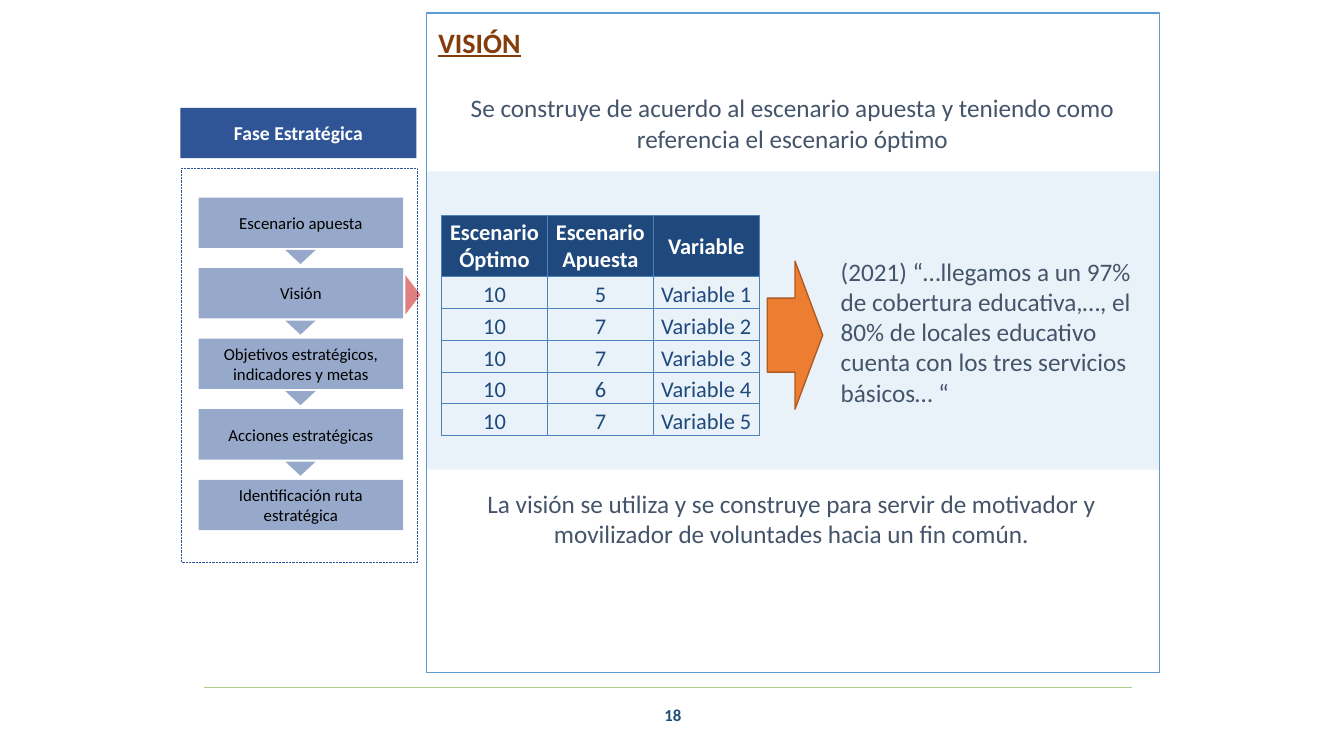
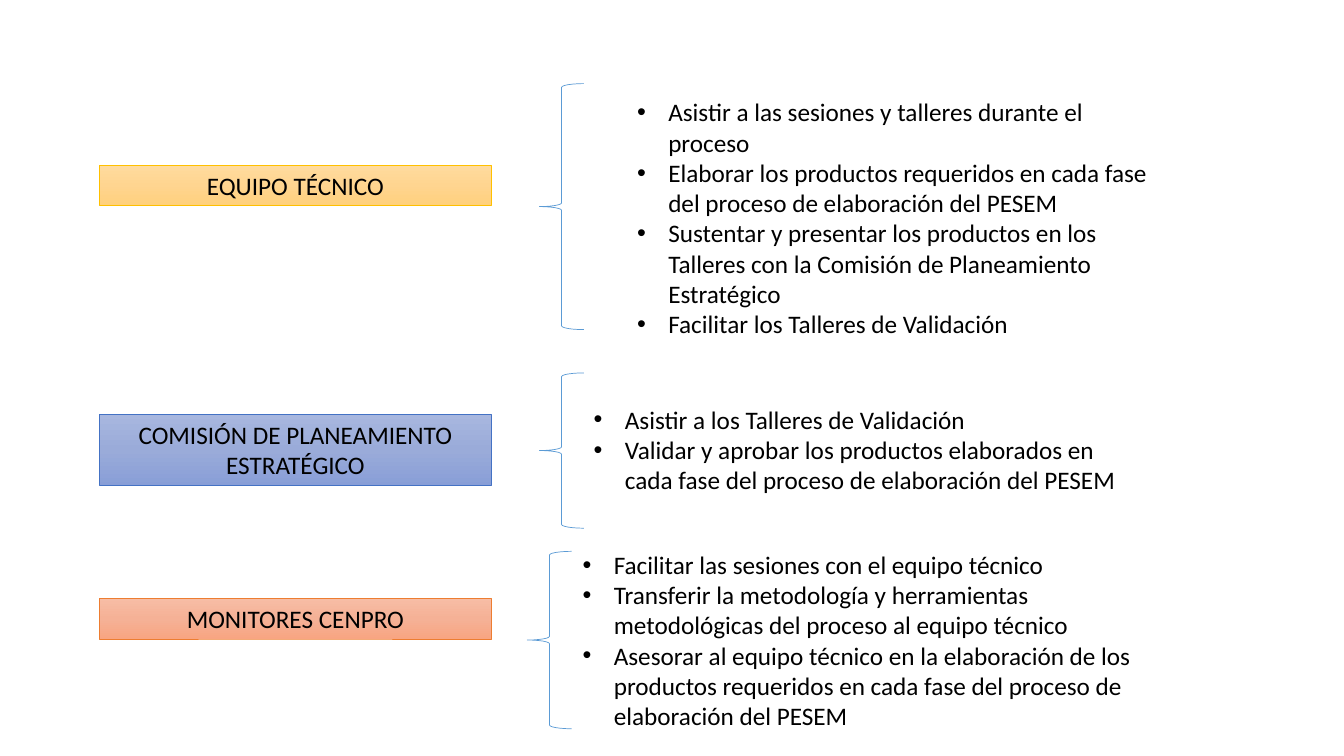
"""Build two slides on the strategic phase: the vision and the roles of each team."""
from copy import deepcopy
from dataclasses import dataclass
from typing import Optional, Sequence

from lxml.etree import SubElement
from pptx import Presentation
from pptx.dml.color import RGBColor
from pptx.enum.dml import MSO_LINE_DASH_STYLE as Dash
from pptx.enum.shapes import MSO_CONNECTOR_TYPE as Connector
from pptx.enum.shapes import MSO_SHAPE as Shape
from pptx.enum.text import MSO_VERTICAL_ANCHOR as Anchor
from pptx.enum.text import PP_PARAGRAPH_ALIGNMENT as Align
from pptx.oxml.ns import qn
from pptx.util import Inches, Pt


@dataclass(frozen=True)
class Theme:
    font: str = "Calibri"
    black: str = "000000"
    white: str = "FFFFFF"
    phase: str = "2F5597"
    marker: str = "C00000"
    accent: str = "5B9BD5"
    body: str = "44546A"
    title: str = "843C0B"
    rule: str = "A9D18E"
    page_number: str = "1F4E79"
    table: str = "1F497D"
    table_border: str = "4F81BD"
    arrow: str = "ED7D31"
    arrow_line: str = "AF5C24"
    title_size: int = 20
    body_size: int = 18
    table_size: int = 16
    phase_size: int = 14
    small_size: int = 12


@dataclass(frozen=True)
class Box:
    left: float
    top: float
    width: float
    height: float

    def lengths(self) -> tuple:
        return tuple(Inches(n) for n in (self.left, self.top, self.width, self.height))


@dataclass(frozen=True)
class Role:
    name: str
    label: Box
    gradient: tuple[str, str, str]
    line: str
    brace: Box
    list_box: Box
    duties: tuple[str, ...]


THEME = Theme()

STEPS = (
    "Escenario apuesta",
    "Visión",
    "Objetivos estratégicos, indicadores y metas",
    "Acciones estratégicas",
    "Identificación ruta estratégica",
)
STEP_PITCH = 0.7

TABLE_HEADER = ("Escenario Óptimo", "Escenario Apuesta", "Variable")
BET_SCORES = (5, 7, 7, 6, 7)
ROW_HEIGHTS = (0.6, 0.32, 0.32, 0.32, 0.3, 0.32)

ROLES = (
    Role(
        "EQUIPO TÉCNICO", Box(0.99, 1.64, 3.88, 0.4),
        ("FFDB9E", "FFD590", "FFD07C"), "FFC000",
        Box(5.35, 0.83, 0.44, 2.44), Box(6.22, 0.91, 5.44, 2.52),
        (
            "Asistir a las sesiones y talleres durante el proceso",
            "Elaborar los productos requeridos en cada fase del proceso de elaboración del PESEM",
            "Sustentar y presentar los productos en los Talleres con la Comisión de "
            "Planeamiento Estratégico",
            "Facilitar los Talleres de Validación",
        ),
    ),
    Role(
        "COMISIÓN DE PLANEAMIENTO ESTRATÉGICO", Box(0.99, 4.11, 3.88, 0.71),
        ("A8B7DF", "9AABD9", "889ED7"), "4472C4",
        Box(5.35, 3.7, 0.44, 1.54), Box(5.79, 3.96, 5.44, 1.01),
        (
            "Asistir a los Talleres de Validación",
            "Validar y aprobar los productos elaborados en cada fase del proceso de "
            "elaboración del PESEM",
        ),
    ),
    Role(
        "MONITORES CENPRO", Box(0.99, 5.94, 3.88, 0.4),
        ("F7BDA5", "F5B196", "F8A582"), "ED7D31",
        Box(5.23, 5.47, 0.44, 1.76), Box(5.68, 5.4, 6.06, 2.22),
        (
            "Facilitar las sesiones con el equipo técnico",
            "Transferir la metodología y herramientas metodológicas del proceso al "
            "equipo técnico",
            "Asesorar al equipo técnico en la elaboración de los productos requeridos en "
            "cada fase del proceso de elaboración del PESEM",
        ),
    ),
)


def rgb(color: str) -> RGBColor:
    return RGBColor.from_string(color)


def write_text(frame, *lines: str, size: int = THEME.body_size, color: str = THEME.black,
               bold: bool = False, underline: bool = False, align: Align = Align.LEFT,
               anchor: Anchor = Anchor.TOP, bullet: bool = False) -> None:
    frame.word_wrap = True
    frame.vertical_anchor = anchor
    for index, line in enumerate(lines):
        para = frame.add_paragraph() if index else frame.paragraphs[0]
        para.alignment = align
        span = para.add_run()
        span.text = line
        font = span.font
        font.name, font.size, font.bold = THEME.font, Pt(size), bold
        font.underline = underline
        font.color.rgb = rgb(color)
        if bullet:
            properties = para._p.get_or_add_pPr()
            properties.set("marL", str(Inches(0.31)))
            properties.set("indent", str(Inches(-0.31)))
            SubElement(properties, qn("a:buFont"), typeface="Arial")
            SubElement(properties, qn("a:buChar"), char="•")


def add_text(page, box: Box, *lines: str, **text_format) -> None:
    write_text(page.shapes.add_textbox(*box.lengths()).text_frame, *lines, **text_format)


def add_figure(page, kind: Shape, box: Box, fill: Optional[str] = None, opacity: int = 100,
               line: Optional[str] = None, width: float = 1, rotation: int = 0):
    figure = page.shapes.add_shape(kind, *box.lengths())
    figure.shadow.inherit = False
    figure.rotation = rotation
    if fill:
        figure.fill.solid()
        figure.fill.fore_color.rgb = rgb(fill)
        if opacity < 100:
            tint = figure.element.spPr.find(qn("a:solidFill")).find(qn("a:srgbClr"))
            SubElement(tint, qn("a:alpha"), val=str(opacity * 1000))
    else:
        figure.fill.background()
    if line:
        figure.line.color.rgb = rgb(line)
        figure.line.width = Pt(width)
    else:
        figure.line.fill.background()
    return figure


def fill_gradient(figure, colors: Sequence[str]) -> None:
    fill = figure.fill
    fill.gradient()
    fill.gradient_angle = 270
    stop_list = figure.element.spPr.find(qn("a:gradFill")).find(qn("a:gsLst"))
    while len(stop_list) < len(colors):
        stop_list.append(deepcopy(stop_list[0]))
    for index, (stop, color) in enumerate(zip(fill.gradient_stops, colors)):
        stop.position = index / (len(colors) - 1)
        stop.color.rgb = rgb(color)


def add_rule(page, left: float, right: float, top: float) -> None:
    rule = page.shapes.add_connector(
        Connector.STRAIGHT, Inches(left), Inches(top), Inches(right), Inches(top))
    rule.line.color.rgb = rgb(THEME.rule)
    rule.line.width = Pt(1.25)
    SubElement(rule.element.spPr, qn("a:effectLst"))


def set_borders(cell, color: str, width: float) -> None:
    properties = cell._tc.get_or_add_tcPr()
    for side in ("lnL", "lnR", "lnT", "lnB"):
        border = SubElement(properties, qn(f"a:{side}"), w=str(Pt(width)))
        SubElement(SubElement(border, qn("a:solidFill")), qn("a:srgbClr"), val=color)


def add_scenarios(page, box: Box) -> None:
    rows = [TABLE_HEADER]
    rows += [("10", str(score), f"Variable {number}")
             for number, score in enumerate(BET_SCORES, 1)]
    table = page.shapes.add_table(len(rows), len(TABLE_HEADER), *box.lengths()).table
    table.first_row = table.horz_banding = False
    for column in table.columns:
        column.width = Inches(box.width / len(TABLE_HEADER))
    for row_index, (row, height) in enumerate(zip(rows, ROW_HEIGHTS)):
        table.rows[row_index].height = Inches(height)
        is_header = row_index == 0
        for column_index, value in enumerate(row):
            cell = table.cell(row_index, column_index)
            cell.margin_left = cell.margin_right = cell.margin_top = Inches(0.01)
            cell.margin_bottom = 0
            cell.vertical_anchor = Anchor.MIDDLE if is_header else Anchor.BOTTOM
            set_borders(cell, THEME.table_border, 1)
            if is_header:
                cell.fill.solid()
                cell.fill.fore_color.rgb = rgb(THEME.table)
            else:
                cell.fill.background()
            write_text(cell.text_frame, value, size=THEME.table_size, bold=is_header,
                       color=THEME.white if is_header else THEME.table, align=Align.CENTER)


def add_phase(page) -> None:
    centered = dict(align=Align.CENTER, anchor=Anchor.MIDDLE)
    heading = add_figure(page, Shape.RECTANGLE, Box(1.79, 1.07, 2.34, 0.5), THEME.phase)
    write_text(heading.text_frame, "Fase Estratégica", size=THEME.phase_size,
               color=THEME.white, bold=True, **centered)
    outline = add_figure(page, Shape.RECTANGLE, Box(1.8, 1.67, 2.34, 3.91),
                         line=THEME.phase, width=0.5)
    outline.line.dash_style = Dash.ROUND_DOT
    for index, step in enumerate(STEPS):
        offset = index * STEP_PITCH
        card = add_figure(page, Shape.RECTANGLE, Box(1.97, 1.96 + offset, 2.03, 0.5),
                          THEME.phase, opacity=50)
        write_text(card.text_frame, step, size=THEME.small_size, **centered)
        if index < len(STEPS) - 1:
            add_figure(page, Shape.ISOSCELES_TRIANGLE, Box(2.83, 2.48 + offset, 0.3, 0.14),
                       THEME.phase, opacity=50, rotation=180)
    add_figure(page, Shape.ISOSCELES_TRIANGLE, Box(3.9, 2.85, 0.39, 0.15),
               THEME.marker, opacity=50, rotation=90)


def build_vision(page) -> None:
    add_figure(page, Shape.RECTANGLE, Box(4.23, 1.7, 7.27, 2.96), THEME.accent, opacity=13)
    add_phase(page)
    add_figure(page, Shape.RECTANGLE, Box(4.23, 0.13, 7.27, 6.54), line=THEME.accent)
    add_text(page, Box(4.25, 0.2, 5, 0.44), "VISIÓN", size=THEME.title_size,
             color=THEME.title, bold=True, underline=True)
    add_text(page, Box(4.25, 0.87, 7.22, 0.71),
             "Se construye de acuerdo al escenario apuesta y teniendo como referencia "
             "el escenario óptimo", color=THEME.body, align=Align.CENTER)
    add_scenarios(page, Box(4.38, 2.14, 3.15, sum(ROW_HEIGHTS)))
    add_figure(page, Shape.RIGHT_ARROW, Box(7.61, 2.59, 0.55, 1.47), THEME.arrow,
               line=THEME.arrow_line)
    add_text(page, Box(8.24, 2.49, 3.23, 1.62),
             "(2021) “…llegamos a un 97% de cobertura educativa,…, el 80% de locales "
             "educativo cuenta con los tres servicios básicos… “", color=THEME.body)
    add_text(page, Box(4.23, 4.79, 7.24, 1.01),
             "La visión se utiliza y se construye para servir de motivador y movilizador "
             "de voluntades hacia un fin común.", color=THEME.body, align=Align.CENTER)
    add_rule(page, 2.02, 11.23, 6.82)
    add_text(page, Box(5.51, 6.89, 2.33, 0.4), "18", size=THEME.small_size, bold=True,
             color=THEME.page_number, align=Align.CENTER, anchor=Anchor.MIDDLE)


def build_roles(page) -> None:
    for role in ROLES:
        label = add_figure(page, Shape.RECTANGLE, role.label, line=role.line, width=0.5)
        fill_gradient(label, role.gradient)
        write_text(label.text_frame, role.name, align=Align.CENTER)
        add_figure(page, Shape.LEFT_BRACE, role.brace, line=THEME.accent, width=0.5)
        add_text(page, role.list_box, *role.duties, bullet=True)


def main() -> None:
    deck = Presentation()
    deck.slide_width, deck.slide_height = Inches(13.33), Inches(7.5)
    for build in (build_vision, build_roles):
        build(deck.slides.add_slide(deck.slide_layouts[6]))
    deck.save("out.pptx")


if __name__ == "__main__":
    main()
